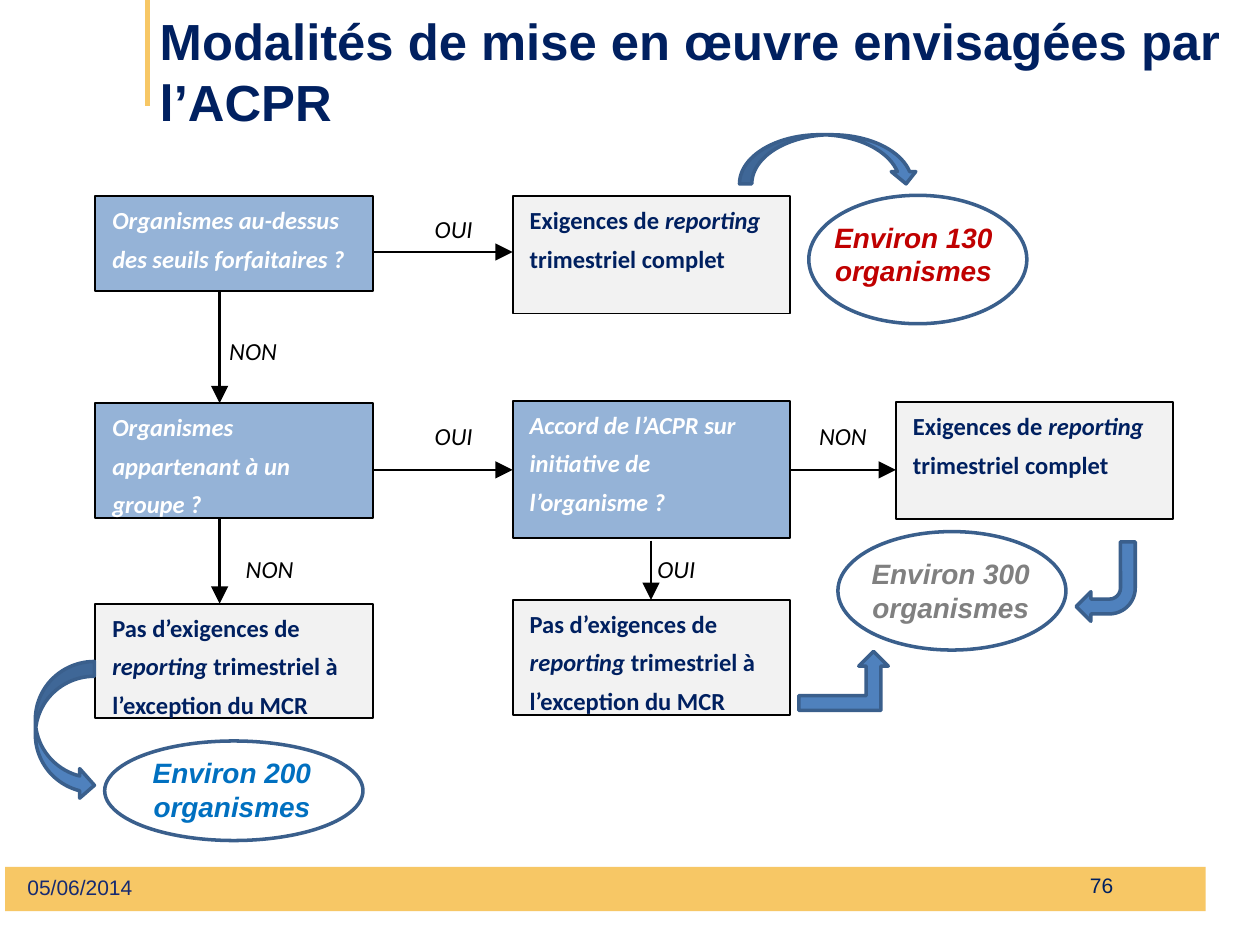
import pptx
import pptx.util
import pptx.dml.color
import pptx.enum.shapes
import pptx.enum.text
import pptx.oxml.ns
from lxml import etree

Pt = pptx.util.Pt
RGB = pptx.dml.color.RGBColor
SHAPE = pptx.enum.shapes.MSO_SHAPE
ALIGN = pptx.enum.text.PP_ALIGN
ANCHOR = pptx.enum.text.MSO_ANCHOR
qn = pptx.oxml.ns.qn

NAVY = RGB(0x00, 0x20, 0x60)
DATE_NAVY = RGB(0x16, 0x2A, 0x71)
GOLD = RGB(0xF7, 0xC7, 0x65)
WHITE = RGB(0xFF, 0xFF, 0xFF)
BLACK = RGB(0x00, 0x00, 0x00)
QUESTION_BLUE = RGB(0x95, 0xB3, 0xD7)
RESULT_GREY = RGB(0xF2, 0xF2, 0xF2)
ARROW_BLUE = RGB(0x4F, 0x81, 0xBD)
OUTLINE = RGB(0x3A, 0x5F, 0x8C)
RED = RGB(0xC0, 0x00, 0x00)
BLUE = RGB(0x00, 0x70, 0xC0)
GREY = RGB(0x80, 0x80, 0x80)

LEFT, MIDDLE, RIGHT = 54.5, 293, 512
BOX_W = 158.5
FULL_REPORT = [("Exigences de ", False), ("reporting", True), (" trimestriel complet", False)]
NO_REPORT = [("Pas d’exigences de ", False), ("reporting", True),
             (" trimestriel à l’exception du MCR", False)]


def set_font(p, name, size, color, bold=False, italic=False):
    p.font.name = name
    p.font.size = Pt(size)
    p.font.color.rgb = color
    p.font.bold = bold
    p.font.italic = italic


def set_margins(tf, left=0, top=0, right=0, bottom=0):
    tf.margin_left, tf.margin_top = Pt(left), Pt(top)
    tf.margin_right, tf.margin_bottom = Pt(right), Pt(bottom)


def add_shape(slide, kind, box, fill, line=None, width=1):
    s = slide.shapes.add_shape(kind, *map(Pt, box))
    s.shadow.inherit = False
    s.fill.solid()
    s.fill.fore_color.rgb = fill
    if line is None:
        s.line.fill.background()
    else:
        s.line.color.rgb = line
        s.line.width = Pt(width)
    return s


def add_text(slide, box, text, name, size, color, bold=False, italic=False,
             align=ALIGN.LEFT, anchor=ANCHOR.TOP):
    tf = slide.shapes.add_textbox(*map(Pt, box)).text_frame
    tf.word_wrap = True
    tf.vertical_anchor = anchor
    p = tf.paragraphs[0]
    p.text = text
    p.alignment = align
    set_font(p, name, size, color, bold, italic)
    return tf


def add_line(slide, x1, y1, x2, y2, color, width, arrow=False):
    c = slide.shapes.add_connector(pptx.enum.shapes.MSO_CONNECTOR.STRAIGHT,
                                   Pt(x1), Pt(y1), Pt(x2), Pt(y2))
    c.line.color.rgb = color
    c.line.width = Pt(width)
    if arrow:
        etree.SubElement(c.line._get_or_add_ln(), qn("a:tailEnd"),
                         type="triangle", w="lg", len="lg")
    etree.SubElement(c._element.spPr, qn("a:effectLst"))


def add_box(slide, x, y, h, runs, fill, color):
    s = add_shape(slide, SHAPE.RECTANGLE, (x, y, BOX_W, h), fill, BLACK)
    tf = s.text_frame
    tf.word_wrap = True
    tf.vertical_anchor = ANCHOR.TOP
    set_margins(tf, left=9.7, right=9)
    p = tf.paragraphs[0]
    p.alignment = ALIGN.LEFT
    p.line_spacing = Pt(22)
    set_font(p, "Calibri", 14, color, bold=True)
    for text, italic in runs:
        r = p.add_run()
        r.text = text
        r.font.italic = italic


def add_question(slide, x, y, h, text):
    add_box(slide, x, y, h, [(text, True)], QUESTION_BLUE, WHITE)


def add_result(slide, x, y, h, runs):
    add_box(slide, x, y, h, runs, RESULT_GREY, NAVY)


def add_label(slide, x, y, text):
    tf = add_text(slide, (x, y, 37, 24.5), text, "Calibri", 14, BLACK, italic=True)
    tf.word_wrap = False
    set_margins(tf)


def add_count(slide, ellipse, text_box, text, color):
    add_shape(slide, SHAPE.OVAL, ellipse, WHITE, OUTLINE, 2)
    add_text(slide, text_box, text, "Arial", 16, color, True, True, ALIGN.CENTER)


def add_header(slide):
    add_line(slide, 84.2, 0, 84.2, 60.5, GOLD, 2.75)
    add_text(slide, (84.2, 9.4, 627, 62), "Modalités de mise en œuvre envisagées par l’ACPR",
             "Arial", 29, NAVY, bold=True, anchor=ANCHOR.MIDDLE)


def add_footer(slide):
    add_shape(slide, SHAPE.RECTANGLE, (2.9, 495.4, 702.7, 25.2), GOLD)
    add_shape(slide, SHAPE.RECTANGLE, (689, 485.3, 20.2, 47.5), WHITE)
    add_text(slide, (8.6, 496, 168, 23), "05/06/2014", "Arial", 12, DATE_NAVY)
    add_text(slide, (475.2, 491, 168, 29), "76", "Arial", 12, NAVY,
             align=ALIGN.RIGHT, anchor=ANCHOR.MIDDLE)


def add_decision_tree(slide):
    add_question(slide, LEFT, 112.2, 54, "Organismes au-dessus des seuils forfaitaires ?")
    add_question(slide, LEFT, 230.4, 65.5, "Organismes appartenant à un groupe ?")
    add_question(slide, MIDDLE, 229, 78.5, "Accord de l’ACPR sur initiative de l’organisme ?")
    add_result(slide, MIDDLE, 112.2, 67, FULL_REPORT)
    add_result(slide, RIGHT, 229.8, 67, FULL_REPORT)
    add_result(slide, LEFT, 345, 65.5, NO_REPORT)
    add_result(slide, MIDDLE, 342.8, 66, NO_REPORT)

    for x1, y1, x2, y2 in [
        (LEFT + BOX_W, 144, MIDDLE, 144),
        (LEFT + BOX_W, 268.5, MIDDLE, 268.5),
        (MIDDLE + BOX_W, 268.5, RIGHT, 268.5),
        (125.5, 166, 125.5, 230.4),
        (125.5, 295.5, 125.5, 345),
        (372, 309, 372, 342.8),
    ]:
        add_line(slide, x1, y1, x2, y2, BLACK, 1.5, arrow=True)

    for x, y, text in [
        (248.4, 122.4, "OUI"), (248.4, 240.5, "OUI"), (375.6, 316.8, "OUI"),
        (131, 192.2, "NON"), (140.4, 316.8, "NON"), (468, 240.5, "NON"),
    ]:
        add_label(slide, x, y, text)


def add_counts(slide):
    add_count(slide, (462.2, 111.6, 124.6, 73.4), (468, 122.4, 108, 46),
              "Environ 130 organismes", RED)
    add_count(slide, (59.8, 423.4, 147.6, 56.9), (64.8, 428.4, 135.4, 46),
              "Environ 200 organismes", BLUE)
    add_count(slide, (478.8, 303.8, 130.3, 67.7), (484.6, 314.6, 117.4, 46),
              "Environ 300 organismes", GREY)


def add_block_arrows(slide):
    arrows = [
        add_shape(slide, kind, box, ARROW_BLUE, OUTLINE, 2)
        for kind, box in [
            (SHAPE.BENT_ARROW, (614.9, 309.6, 33.8, 45.4)),
            (SHAPE.BENT_UP_ARROW, (456.5, 372.2, 51.1, 33.8)),
            (SHAPE.CURVED_RIGHT_ARROW, (20.2, 378, 33.8, 79.2)),
            (SHAPE.CURVED_UP_ARROW, (422.6, 77, 102.2, 28.1)),
        ]
    ]
    arrows[0].rotation = 180
    arrows[-1]._element.spPr.xfrm.set("flipV", "1")


def main():
    prs = pptx.Presentation()
    prs.slide_width, prs.slide_height = Pt(720), Pt(540)
    slide = prs.slides.add_slide(prs.slide_layouts[6])
    add_header(slide)
    add_decision_tree(slide)
    add_counts(slide)
    add_block_arrows(slide)
    add_footer(slide)
    prs.save("out.pptx")


if __name__ == "__main__":
    main()
